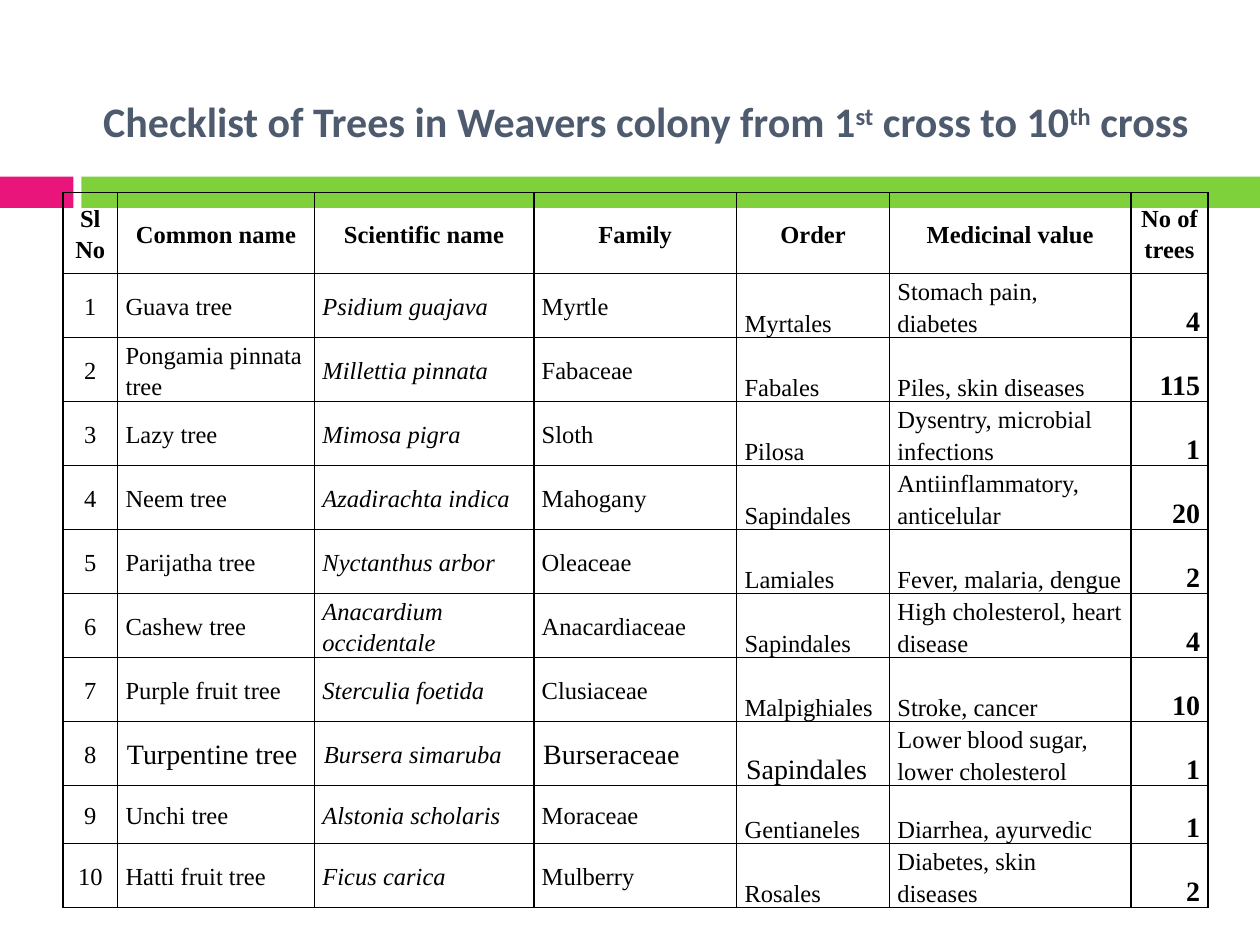
from dataclasses import dataclass

from lxml.etree import SubElement
from pptx import Presentation
from pptx.dml.color import RGBColor as Rgb
from pptx.enum.shapes import MSO_SHAPE as Preset
from pptx.enum.text import MSO_ANCHOR as Anchor, PP_ALIGN as Align
from pptx.oxml.ns import qn
from pptx.util import Cm, Pt


@dataclass(frozen=True)
class Theme:
    pink: str = "EA157A"
    green: str = "7FD13B"
    slate: str = "4E5B6F"
    black: str = "000000"
    title_font: str = "Calibri"
    table_font: str = "Times New Roman"
    title_size: int = 24
    body_size: int = 14
    large_size: int = 16
    table_leading: float = 1.27


@dataclass(frozen=True)
class Band:
    left: float
    width: float
    color: str


@dataclass(frozen=True)
class Column:
    heading: str
    width: float
    align: Align = Align.LEFT
    anchor: Anchor = Anchor.MIDDLE
    size: int = Theme.body_size
    bold: bool = False
    italic: bool = False


@dataclass(frozen=True)
class Tree:
    common: str
    scientific: str
    family: str
    order: str
    medicinal: str
    count: int
    height: float = 1.29
    large_columns: tuple[int, ...] = ()


THEME = Theme()
BANDS = [Band(0, 1.48, THEME.pink), Band(1.64, 23.76, THEME.green)]
COLUMNS = [
    Column("Sl No", 1.1, align=Align.CENTER),
    Column("Common name", 3.97),
    Column("Scientific name", 4.42, italic=True),
    Column("Family", 4.09),
    Column("Order", 3.08, anchor=Anchor.BOTTOM),
    Column("Medicinal value", 4.87, anchor=Anchor.BOTTOM),
    Column("No of trees", 1.55, Align.RIGHT, Anchor.BOTTOM, THEME.large_size, bold=True),
]
HEADER_HEIGHT = 1.63
TREES = [
    Tree("Guava tree", "Psidium guajava", "Myrtle", "Myrtales", "Stomach pain, diabetes", 4),
    Tree("Pongamia pinnata tree", "Millettia pinnata", "Fabaceae", "Fabales",
         "Piles, skin diseases", 115),
    Tree("Lazy tree", "Mimosa pigra", "Sloth", "Pilosa", "Dysentry, microbial infections", 1),
    Tree("Neem tree", "Azadirachta indica", "Mahogany", "Sapindales",
         "Antiinflammatory, anticelular", 20),
    Tree("Parijatha tree", "Nyctanthus arbor", "Oleaceae", "Lamiales",
         "Fever, malaria, dengue", 2),
    Tree("Cashew tree", "Anacardium occidentale", "Anacardiaceae", "Sapindales",
         "High cholesterol, heart disease", 4),
    Tree("Purple fruit tree", "Sterculia foetida", "Clusiaceae", "Malpighiales",
         "Stroke, cancer", 10),
    Tree("Turpentine tree", "Bursera simaruba", "Burseraceae", "Sapindales",
         "Lower blood sugar, lower cholesterol", 1, large_columns=(1, 3, 4)),
    Tree("Unchi tree", "Alstonia scholaris", "Moraceae", "Gentianeles",
         "Diarrhea, ayurvedic", 1, height=1.17),
    Tree("Hatti fruit tree", "Ficus carica", "Mulberry", "Rosales",
         "Diabetes, skin diseases", 2),
]


def write(frame, text: str, *, font: str, size: int, color: str, align: Align,
          bold: bool = False, italic: bool = False, leading: float | None = None) -> None:
    """Write one paragraph; text between carets is superscript."""
    paragraph = frame.paragraphs[0]
    paragraph.alignment = align
    if leading:
        paragraph.line_spacing = Pt(size * leading)
    for index, part in enumerate(text.split("^")):
        run = paragraph.add_run()
        run.text = part
        run.font.name = font
        run.font.size = Pt(size)
        run.font.bold = bold
        run.font.italic = italic
        run.font.color.rgb = Rgb.from_string(color)
        if index % 2:
            run.font._element.set("baseline", "30000")


def draw_band(slide, band: Band) -> None:
    bar = slide.shapes.add_shape(Preset.RECTANGLE, Cm(band.left), Cm(3.56),
                                 Cm(band.width), Cm(0.63))
    bar.shadow.inherit = False
    bar.fill.solid()
    bar.fill.fore_color.rgb = Rgb.from_string(band.color)
    bar.line.fill.background()


def draw_title(slide, text: str) -> None:
    title = slide.shapes.add_textbox(Cm(-0.21), Cm(1.27), Cm(26.46), Cm(2.34))
    frame = title.text_frame
    frame.word_wrap = True
    frame.vertical_anchor = Anchor.MIDDLE
    write(frame, text, font=THEME.title_font, size=THEME.title_size,
          color=THEME.slate, align=Align.CENTER, bold=True)


def add_borders(cell) -> None:
    properties = cell._tc.get_or_add_tcPr()
    for side in ("a:lnL", "a:lnR", "a:lnT", "a:lnB"):
        border = SubElement(properties, qn(side), w=str(Pt(1)))
        fill = SubElement(border, qn("a:solidFill"))
        SubElement(fill, qn("a:srgbClr"), val=THEME.black)


def fill_cell(cell, text: str, anchor: Anchor, margin: float = 0.16, **text_format) -> None:
    add_borders(cell)
    cell.fill.background()
    cell.vertical_anchor = anchor
    cell.margin_left = cell.margin_right = Cm(margin)
    cell.margin_top = cell.margin_bottom = 0
    write(cell.text_frame, text, font=THEME.table_font, color=THEME.black,
          leading=THEME.table_leading, **text_format)


def draw_checklist(slide, columns: list[Column], trees: list[Tree]) -> None:
    heights = [HEADER_HEIGHT] + [tree.height for tree in trees]
    checklist = slide.shapes.add_table(
        len(heights), len(columns), Cm(1.27), Cm(3.88),
        Cm(sum(column.width for column in columns)), Cm(sum(heights)))
    table = checklist.table
    table.first_row = table.horz_banding = False
    for row, height in zip(table.rows, heights):
        row.height = Cm(height)
    checklist.height = Cm(14.91)

    # Column widths and headings
    for index, column in enumerate(columns):
        table.columns[index].width = Cm(column.width)
        fill_cell(table.cell(0, index), column.heading, Anchor.MIDDLE,
                  size=THEME.body_size, align=Align.CENTER, bold=True)

    # One row per tree
    for number, tree in enumerate(trees, start=1):
        values = (number, tree.common, tree.scientific, tree.family,
                  tree.order, tree.medicinal, tree.count)
        for index, (column, value) in enumerate(zip(columns, values)):
            size = THEME.large_size if index in tree.large_columns else column.size
            wide_margin = tree.large_columns and 1 <= index <= 4
            fill_cell(table.cell(number, index), str(value), column.anchor,
                      margin=0.19 if wide_margin else 0.16, size=size,
                      align=column.align, bold=column.bold, italic=column.italic)


def main() -> None:
    presentation = Presentation()
    presentation.slide_width, presentation.slide_height = Cm(25.4), Cm(19.05)
    slide = presentation.slides.add_slide(presentation.slide_layouts[6])
    for band in BANDS:
        draw_band(slide, band)
    draw_title(slide, "Checklist of Trees in Weavers colony from 1^st^ cross to 10^th^ cross")
    draw_checklist(slide, COLUMNS, TREES)
    presentation.save("out.pptx")


if __name__ == "__main__":
    main()
